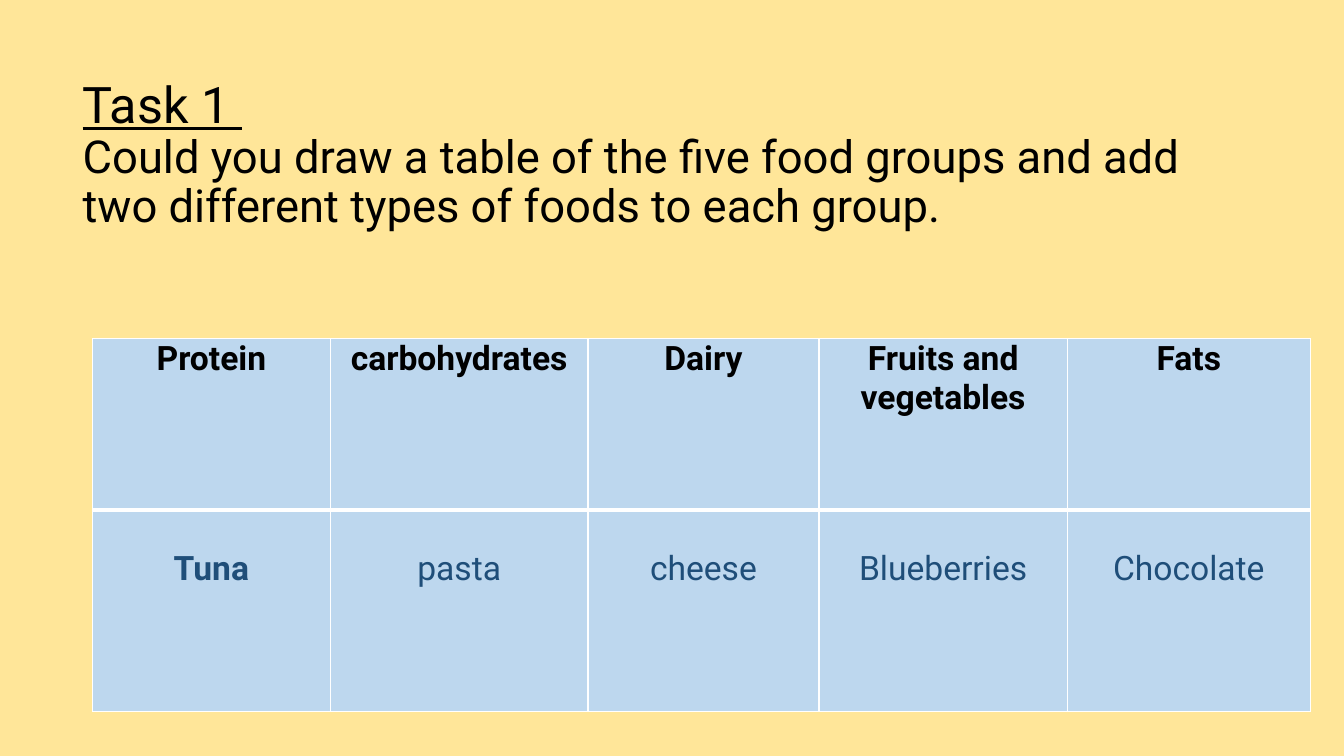
from lxml import etree
from pptx import Presentation
from pptx.dml.color import RGBColor
from pptx.enum.text import MSO_ANCHOR, PP_ALIGN
from pptx.oxml.ns import qn
from pptx.util import Pt

CREAM = RGBColor(0xFF, 0xE6, 0x99)
PALE_BLUE = RGBColor(0xBD, 0xD7, 0xEE)
NAVY = RGBColor(0x1F, 0x4E, 0x79)
BLACK = RGBColor(0, 0, 0)
WHITE = RGBColor(0xFF, 0xFF, 0xFF)
MIDDLE = MSO_ANCHOR.MIDDLE
CENTER = PP_ALIGN.CENTER

FOOD_GROUPS = [
    ("Protein", "Tuna"),
    ("carbohydrates", "pasta"),
    ("Dairy", "cheese"),
    ("Fruits and vegetables", "Blueberries"),
    ("Fats", "Chocolate"),
]
COLUMN_WIDTHS = [170, 184, 165, 177.5, 173.5]
ROW_HEIGHTS = [122.5, 143.5]
THIN, THICK = 1, 3


class TaskSlide:
    font_name = "Roboto"
    cell_size = 24

    def __init__(self, presentation):
        self.slide = presentation.slides.add_slide(presentation.slide_layouts[6])
        fill = self.slide.background.fill
        fill.solid()
        fill.fore_color.rgb = CREAM

    def title(self, left, top, width, height, heading, question):
        box = self.slide.shapes.add_textbox(Pt(left), Pt(top), Pt(width), Pt(height))
        frame = box.text_frame
        frame.word_wrap = True
        frame.vertical_anchor = MIDDLE
        paragraph = frame.paragraphs[0]
        paragraph.line_spacing = 0.9
        paragraph.font.name = self.font_name
        paragraph.font.color.rgb = BLACK
        heading_run = paragraph.add_run()
        heading_run.text = heading
        heading_run.font.size = Pt(36)
        heading_run.font.underline = True
        paragraph.add_line_break()
        question_run = paragraph.add_run()
        question_run.text = question
        question_run.font.size = Pt(32.4)

    def food_table(self, left, top):
        shape = self.slide.shapes.add_table(
            len(ROW_HEIGHTS), len(COLUMN_WIDTHS), Pt(left), Pt(top),
            Pt(sum(COLUMN_WIDTHS)), Pt(sum(ROW_HEIGHTS)))
        table = shape.table
        for row, height in zip(table.rows, ROW_HEIGHTS):
            row.height = Pt(height)
        for index, (group, food) in enumerate(FOOD_GROUPS):
            table.columns[index].width = Pt(COLUMN_WIDTHS[index])
            self.cell(table.cell(0, index), group, BLACK, True, 0, THIN, THICK)
            self.cell(table.cell(1, index), food, NAVY, index == 0, 28, THICK, THIN)

    def cell(self, cell, text, color, bold, margin_top, top_line, bottom_line):
        cell.margin_left = cell.margin_right = Pt(5)
        cell.margin_top = Pt(margin_top)
        cell.margin_bottom = 0
        cell.fill.solid()
        cell.fill.fore_color.rgb = PALE_BLUE
        self.borders(cell, top_line, bottom_line)
        cell.text = text
        paragraph = cell.text_frame.paragraphs[0]
        paragraph.alignment = CENTER
        font = paragraph.font
        font.name = self.font_name
        font.size = Pt(self.cell_size)
        font.bold = bold
        font.color.rgb = color

    def borders(self, cell, top_line, bottom_line):
        properties = cell._tc.get_or_add_tcPr()
        sides = {"lnL": THIN, "lnR": THIN, "lnT": top_line, "lnB": bottom_line}
        for position, (side, width) in enumerate(sides.items()):
            line = etree.Element(qn(f"a:{side}"), w=str(Pt(width)))
            fill = etree.SubElement(line, qn("a:solidFill"))
            etree.SubElement(fill, qn("a:srgbClr"), val=str(WHITE))
            properties.insert(position, line)


def main():
    presentation = Presentation()
    presentation.slide_width = Pt(960)
    presentation.slide_height = Pt(540)
    task = TaskSlide(presentation)
    task.title(52, 55.5, 828, 112, "Task 1 ",
               "Could you draw a table of the five food groups and add "
               "two different types of foods to each group.")
    task.food_table(66, 242)
    presentation.save("out.pptx")


if __name__ == "__main__":
    main()
